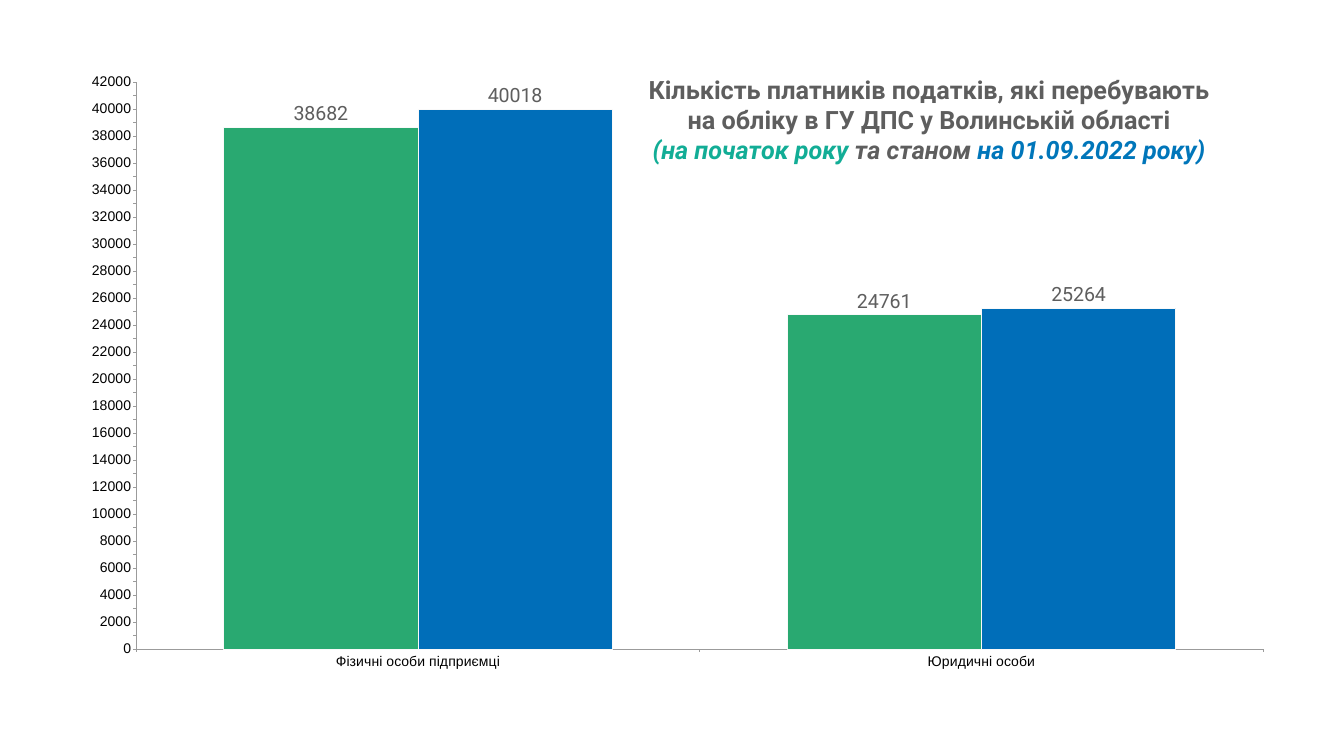
"""Build a slide comparing taxpayer counts in a clustered column chart."""
from pptx import Presentation
from pptx.chart.data import CategoryChartData
from pptx.dml.color import RGBColor
from pptx.enum import chart as ch, text
from pptx.oxml import parse_xml
from pptx.oxml.ns import nsdecls
from pptx.util import Inches, Pt

CATEGORIES = ["Фізичні особи підприємці", "Юридичні особи"]
SERIES = [
    ("Series 1", (38682, 24761), "29A971"),
    ("Series 2", (40018, 25264), "006EB9"),
]
GREY = "5E5E5E"
TITLE = [
    [("Кількість платників податків, які перебувають", GREY, False)],
    [("на обліку в ГУ ДПС у Волинській області", GREY, False)],
    [("(на початок року", "12AD96", True), (" та станом ", GREY, True),
     ("на 01.09.2022 року)", "0076BA", True)],
]
CHART_BOX = (1.07, 1.45, 24.02, 11.94)
PLOT = {"x": 0.068, "y": 0.015, "w": 0.931, "h": 0.942}
TITLE_POS = {"x": 0.49, "y": 0.0}


def rgb(value):
    return RGBColor.from_string(value)


def set_font(font, size, color, name="Roboto", bold=False, italic=False):
    font.size, font.name, font.bold, font.italic = Pt(size), name, bold, italic
    font.color.rgb = rgb(color)


def add_run(p, content, **fmt):
    r = p.add_run()
    r.text = content
    set_font(r.font, **fmt)


def layout(position, inner=False):
    target = '<c:layoutTarget val="inner"/>' if inner else ""
    modes = "".join(f'<c:{k}Mode val="edge"/>' for k in "xy")
    values = "".join(f'<c:{k} val="{v}"/>' for k, v in position.items())
    return parse_xml(f'<c:layout {nsdecls("c")}><c:manualLayout>{target}{modes}'
                     f'{values}</c:manualLayout></c:layout>')


def add_title(chart):
    tf = chart.chart_title.text_frame
    for i, line in enumerate(TITLE):
        p = tf.add_paragraph() if i else tf.paragraphs[0]
        p.alignment = text.PP_ALIGN.CENTER
        for content, color, italic in line:
            add_run(p, content, size=36, color=color, bold=True, italic=italic)
    title = chart.chart_title._element
    for old in title.xpath("c:layout"):
        title.remove(old)
    title.xpath("c:tx")[0].addnext(layout(TITLE_POS))
    title.xpath("c:overlay")[0].set("val", "1")


def style_axis(axis):
    axis.has_major_gridlines = False
    axis.major_tick_mark = ch.XL_TICK_MARK.OUTSIDE
    axis.minor_tick_mark = ch.XL_TICK_MARK.NONE
    axis.format.line.color.rgb = rgb("9B9B9B")
    axis.format.line.width = Pt(1)
    set_font(axis.tick_labels.font, 20, "000000", "Arial")


def style_series(series, color):
    series.format.fill.solid()
    series.format.fill.fore_color.rgb = rgb(color)
    series.format.line.color.rgb = rgb("F9F9F9")
    series.format.line.width = Pt(0.75)
    labels = series.data_labels
    labels.show_value = True
    labels.position = ch.XL_LABEL_POSITION.OUTSIDE_END
    set_font(labels.font, 28, GREY)


def add_taxpayer_chart(s):
    data = CategoryChartData()
    data.categories = CATEGORIES
    for name, values, _ in SERIES:
        data.add_series(name, values)
    chart = s.shapes.add_chart(ch.XL_CHART_TYPE.COLUMN_CLUSTERED,
                               *map(Inches, CHART_BOX), data).chart
    set_font(chart.font, 10, GREY)
    chart.has_legend = False
    add_title(chart)
    plot = chart.plots[0]
    plot.gap_width, plot.overlap, plot.vary_by_categories = 90, 0, False
    for series, (_, _, color) in zip(plot.series, SERIES):
        style_series(series, color)
    for axis in (chart.category_axis, chart.value_axis):
        style_axis(axis)
    chart.category_axis.tick_label_position = ch.XL_TICK_LABEL_POSITION.LOW
    axis = chart.value_axis
    axis.minimum_scale, axis.maximum_scale, axis.major_unit = 0, 42000, 1000
    area = chart._chartSpace.xpath("c:chart/c:plotArea")[0]
    for old in area.xpath("c:layout"):
        area.remove(old)
    area.insert(0, layout(PLOT, inner=True))


def main():
    prs = Presentation()
    prs.slide_width, prs.slide_height = Inches(26.67), Inches(15)
    add_taxpayer_chart(prs.slides.add_slide(prs.slide_layouts[6]))
    prs.save("out.pptx")


if __name__ == "__main__":
    main()
